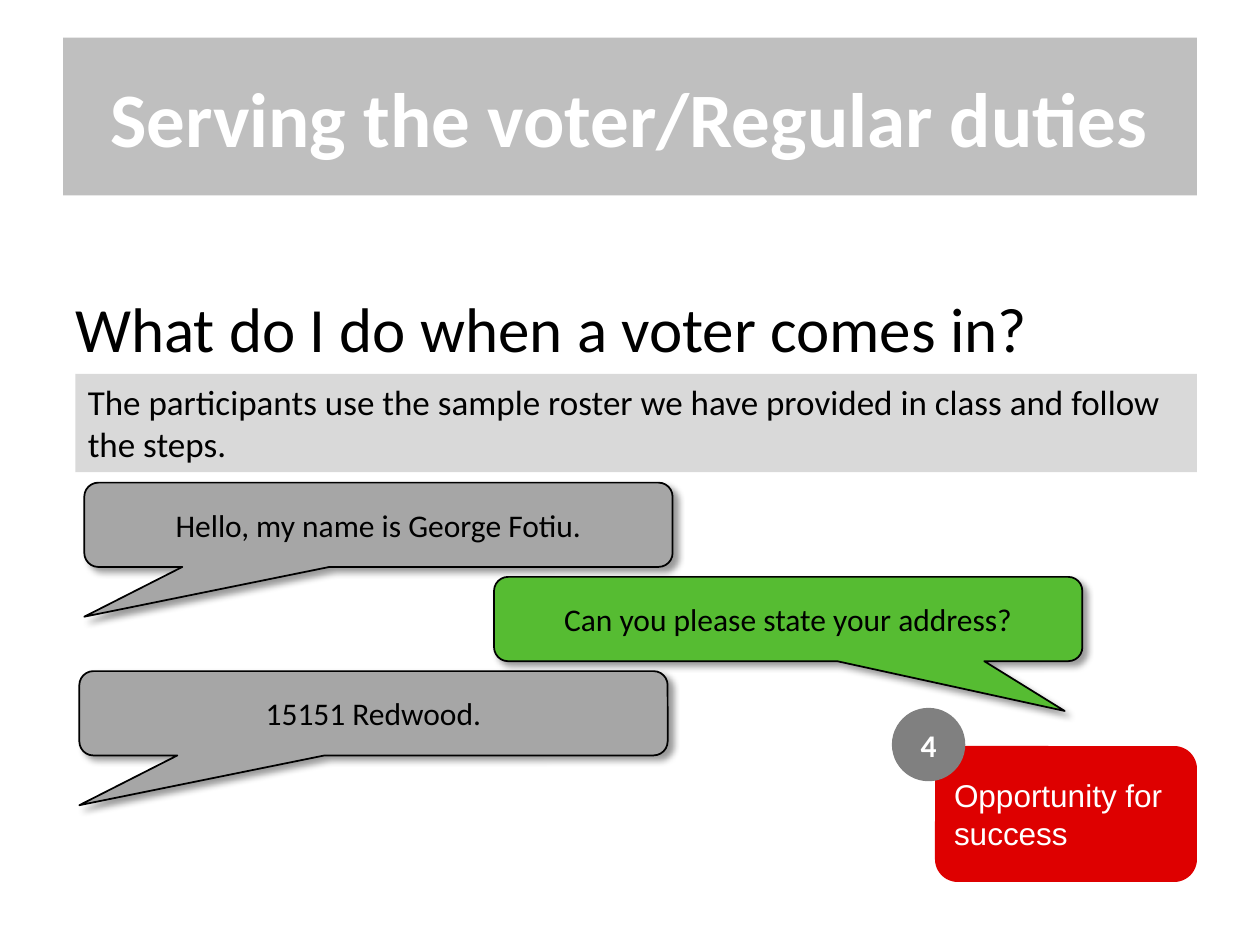
import pptx
import pptx.dml.color
import pptx.enum.shapes
import pptx.enum.text
import pptx.oxml
import pptx.oxml.ns
import pptx.util

Cm = pptx.util.Cm
Pt = pptx.util.Pt
SHAPE = pptx.enum.shapes.MSO_SHAPE
ALIGN = pptx.enum.text.PP_ALIGN
ANCHOR = pptx.enum.text.MSO_ANCHOR

TITLE = "Serving the voter/Regular duties"
QUESTION = "What do I do when a voter comes in?"
NOTE = "The participants use the sample roster we have provided in class and follow the steps."
DIALOGUE = [
    ("voter", "Hello, my name is George Fotiu.", 1.7),
    ("worker", "Can you please state your address?", 9.96),
    ("voter", "15151 Redwood.", 1.6),
]
OPPORTUNITY = "Opportunity for success"
OPPORTUNITY_NUMBER = "4"

THEME = {
    "font": "Calibri", "tag_font": "Arial",
    "title_size": 44, "question_size": 36, "note_size": 20, "label_size": 18,
    "white": "FFFFFF", "black": "000000",
    "banner": "BFBFBF", "note": "D9D9D9", "tag": "DE0000", "badge": "808080",
    "voter": "A6A6A6", "worker": "56BC32",
}
TAILS = {"voter": (-0.5, 1.09), "worker": (0.47, 1.09)}
CALLOUT_TOP, CALLOUT_STEP, CALLOUT_WIDTH, CALLOUT_HEIGHT = 9.73, 1.9, 11.86, 1.7

SHADOW = (
    '<a:effectLst %s><a:outerShdw blurRad="50800" dist="38100" dir="2700000" '
    'algn="tl" rotWithShape="0"><a:srgbClr val="%s"><a:alpha val="40000"/></a:srgbClr>'
    "</a:outerShdw></a:effectLst>"
)


def color(name):
    return pptx.dml.color.RGBColor.from_string(THEME[name])


def place(shape, left, top, width, height):
    shape.left, shape.top = Cm(left), Cm(top)
    shape.width, shape.height = Cm(width), Cm(height)


def write(shape, text, size, ink="black", font="font", bold=False,
          align=ALIGN.LEFT, anchor=ANCHOR.MIDDLE):
    frame = shape.text_frame
    frame.word_wrap = True
    frame.auto_size = pptx.enum.text.MSO_AUTO_SIZE.NONE
    frame.vertical_anchor = anchor
    frame.text = text
    para = frame.paragraphs[0]
    para.alignment = align
    para.font.name = THEME[font]
    para.font.size = Pt(THEME[size])
    para.font.bold = bold
    para.font.color.rgb = color(ink)


def add_box(page, kind, bounds, fill):
    box = page.shapes.add_shape(kind, *map(Cm, bounds))
    box.shadow.inherit = False
    box.fill.solid()
    box.fill.fore_color.rgb = color(fill)
    box.line.fill.background()
    return box


def add_callout(page, row, speaker, text, left):
    bounds = (left, CALLOUT_TOP + row * CALLOUT_STEP, CALLOUT_WIDTH, CALLOUT_HEIGHT)
    callout = add_box(page, SHAPE.ROUNDED_RECTANGULAR_CALLOUT, bounds, speaker)
    callout.adjustments[0], callout.adjustments[1] = TAILS[speaker]
    callout.line.color.rgb = color("black")
    callout.line.width = Pt(1)
    properties = callout._element.spPr
    effects = properties.find(pptx.oxml.ns.qn("a:effectLst"))
    shadow = SHADOW % (pptx.oxml.ns.nsdecls("a"), THEME["black"])
    properties.replace(effects, pptx.oxml.parse_xml(shadow))
    write(callout, text, "label_size", align=ALIGN.CENTER)


def main():
    deck = pptx.Presentation()
    deck.slide_width, deck.slide_height = Cm(25.4), Cm(19.05)
    page = deck.slides.add_slide(deck.slide_layouts[5])

    title = page.shapes.title
    place(title, 1.27, 0.76, 22.86, 3.18)
    title.fill.solid()
    title.fill.fore_color.rgb = color("banner")
    write(title, TITLE, "title_size", "white", bold=True)
    title.text_frame.margin_left = Cm(0.95)

    question = page.shapes.add_textbox(*map(Cm, (1.27, 5.72, 22.86, 11.3)))
    write(question, QUESTION, "question_size", anchor=ANCHOR.TOP)

    for row, (speaker, text, left) in enumerate(DIALOGUE):
        add_callout(page, row, speaker, text, left)

    note = add_box(page, SHAPE.RECTANGLE, (1.52, 7.54, 22.61, 1.98), "note")
    write(note, NOTE, "note_size", anchor=ANCHOR.TOP)

    tag = add_box(page, SHAPE.ROUNDED_RECTANGLE, (18.85, 15.04, 5.28, 2.74), "tag")
    write(tag, OPPORTUNITY, "label_size", "white", font="tag_font")

    badge = add_box(page, SHAPE.OVAL, (17.98, 14.27, 1.48, 1.48), "badge")
    write(badge, OPPORTUNITY_NUMBER, "label_size", "white", bold=True, align=ALIGN.CENTER)

    deck.save("out.pptx")


if __name__ == "__main__":
    main()
